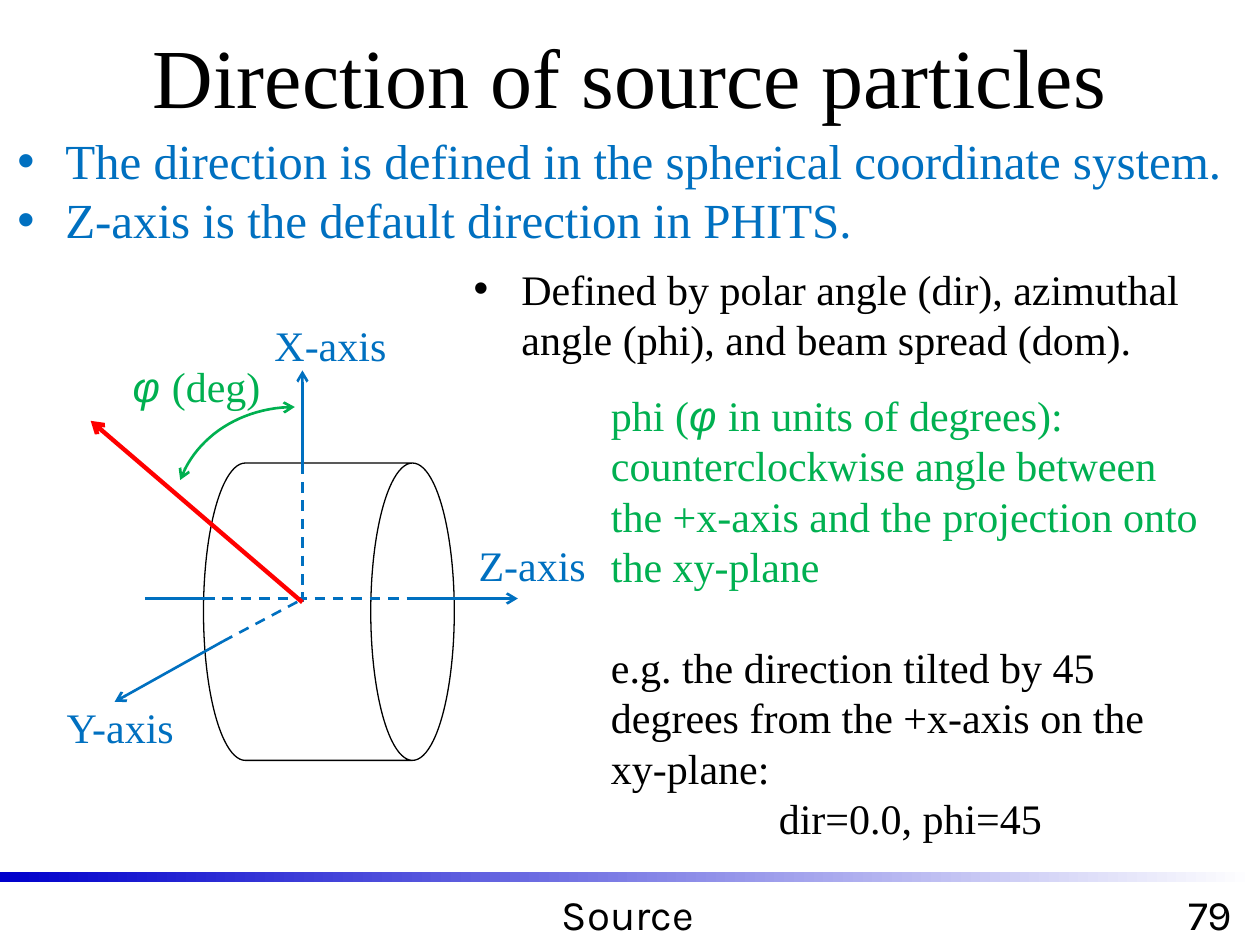
from lxml import etree
from pptx import Presentation
from pptx.dml.color import RGBColor
from pptx.enum.dml import MSO_LINE
from pptx.enum.shapes import MSO_CONNECTOR, MSO_SHAPE
from pptx.enum.text import MSO_ANCHOR, PP_ALIGN
from pptx.oxml.ns import qn
from pptx.util import Inches, Pt

DASH = MSO_LINE.DASH
STRAIGHT = MSO_CONNECTOR.STRAIGHT
CAN, RECT = MSO_SHAPE.CAN, MSO_SHAPE.RECTANGLE
LEFT, MID = PP_ALIGN.LEFT, PP_ALIGN.CENTER
TOP, CORE = MSO_ANCHOR.TOP, MSO_ANCHOR.MIDDLE

COLS, ROWS = 100, 75
SERIF, SANS, FOOT = "Times New Roman", "Arial", "Karla"
HEX = {"black": "000000", "white": "FFFFFF", "blue": "0070C0",
       "green": "00B050", "red": "FF0000", "navy": "0000CC"}

deck = Presentation()
deck.slide_width, deck.slide_height = Inches(10), Inches(7.5)
CELL = deck.slide_width / COLS
slide = deck.slides.add_slide(deck.slide_layouts[6])
shapes = slide.shapes


def cells(*nums):
    """Turn grid cells into slide lengths."""
    return [round(n * CELL) for n in nums]


def tint(name):
    return RGBColor.from_string(HEX[name])


def sub(box, x, y, w, h):
    """Place a part inside a box, counted from its top left corner."""
    return box[0] + x, box[1] + y, w, h


def add_dot(para):
    props = para._p.get_or_add_pPr()
    props.set("marL", str(Inches(0.38)))
    props.set("indent", str(-Inches(0.38)))
    etree.SubElement(props, qn("a:buFont")).set("typeface", SANS)
    etree.SubElement(props, qn("a:buChar")).set("char", "•")


def write(box, paras, size=24, color="black", font=SERIF, align=LEFT,
          anchor=TOP, dots=False):
    """Add a text box; a φ set apart by bars turns italic sans."""
    frame = shapes.add_textbox(*cells(*box)).text_frame
    frame.word_wrap = True
    frame.vertical_anchor = anchor
    for i, text in enumerate(paras):
        para = frame.paragraphs[0] if i == 0 else frame.add_paragraph()
        para.alignment = align
        if dots:
            add_dot(para)
        for part in text.split("|"):
            run = para.add_run()
            run.text = part
            greek = part.startswith("φ")
            run.font.name = SANS if greek else font
            run.font.italic = greek
            run.font.size = Pt(size)
            run.font.color.rgb = tint(color)
    return frame


def tip(line, *ends):
    """Put open arrowheads on the named ends of a line."""
    for end in ends:
        etree.SubElement(line._get_or_add_ln(), qn("a:" + end)).set("type", "arrow")


def draw(box, start, end, color="blue", width=1.5, dash=False, arrow=False):
    ends = [box[k % 2] + n for k, n in enumerate((*start, *end))]
    rod = shapes.add_connector(STRAIGHT, *cells(*ends))
    rod.line.color.rgb = tint(color)
    rod.line.width = Pt(width)
    if dash:
        rod.line.dash_style = DASH
    if arrow:
        tip(rod.line, "tailEnd")
    etree.SubElement(rod._element.spPr, qn("a:effectLst"))


def curve(box, a, b, c, d, steps=24):
    """Draw the azimuth sweep, a cubic curve with two arrowheads."""
    dots = []
    for i in range(steps + 1):
        t = i / steps
        s = 1 - t
        mix = (s ** 3, 3 * s * s * t, 3 * s * t * t, t ** 3)
        dots.append(cells(*(box[k] + sum(m * p[k] for m, p in zip(mix, (a, b, c, d)))
                            for k in (0, 1))))
    pen = shapes.build_freeform(*dots[0])
    pen.add_line_segments(dots[1:], close=False)
    arc = pen.convert_to_shape()
    arc.shadow.inherit = False
    arc.fill.background()
    arc.line.color.rgb = tint("green")
    arc.line.width = Pt(1.5)
    tip(arc.line, "headEnd", "tailEnd")


def drum(box):
    """Draw the cylinder lying on its side, its axis along Z."""
    can = shapes.add_shape(CAN, *cells(*box))
    can.adjustments[0] = 0.333
    can.rotation = 90
    can.shadow.inherit = False
    can.fill.solid()
    can.fill.fore_color.rgb = tint("white")
    can.line.color.rgb = tint("black")
    can.line.width = Pt(0.75)


def axes(box):
    """Draw the cylinder, its three axes and the source direction."""
    drum(sub(box, 10.3, 13.6, 23.6, 19.9))
    zero = (20, 22.8)
    z_in, z_out = (12.2, 22.5), (28.9, 22.5)
    x_out, y_out = (20, 11.8), (13.7, 25.9)
    draw(box, z_out, (37.1, 22.5), arrow=True)
    draw(box, (7.5, 22.5), z_in)
    draw(box, z_in, z_out, dash=True)
    draw(box, x_out, (20, 4.4), arrow=True)
    draw(box, x_out, zero, dash=True)
    draw(box, y_out, (5.1, 30.7), arrow=True)
    draw(box, y_out, (20.1, 22.5), dash=True)
    curve(box, (10.3, 13.1), (11.6, 9.6), (15.2, 7.3), (19.4, 7.3))
    draw(box, zero, (3.2, 8.4), color="red", width=2.5, arrow=True)
    for name, x, y in (("X", 16.8, -0.1), ("Y", 0.3, 30.2), ("Z", 33, 17.3)):
        write(sub(box, x, y, 13.3, 5), [name + "-axis"], color="blue")
    write(sub(box, 4.5, 3.1, 14.2, 5.1), ["φ |(deg)"], color="green", align=MID)


def head(box):
    write(sub(box, 2.5, -0.3, 95, 12.5), ["Direction of source particles"],
          size=48, align=MID, anchor=CORE)
    write(sub(box, 0.4, 9.9, 98, 10.4),
          ["The direction is defined in the spherical coordinate system.",
           "Z-axis is the default direction in PHITS."],
          size=28, color="blue", dots=True)


def notes(box):
    """Write the angle definitions and the worked example."""
    write(sub(box, 0, 0, 59.5, 9.1),
          ["Defined by polar angle (dir), azimuthal angle (phi), "
           "and beam spread (dom)."], dots=True)
    frame = write(sub(box, 10.9, 10, 49.5, 37.4),
                  ["phi (|φ |in units of degrees): counterclockwise angle between "
                   "the +x-axis and the projection onto the xy-plane",
                   "e.g. the direction tilted by 45 degrees from the +x-axis "
                   "on the xy-plane:",
                   "dir=0.0, phi=45"])
    rule, case, value = frame.paragraphs
    for run in rule.runs:
        run.font.color.rgb = tint("green")
    case.space_before = Pt(28.8)
    value.alignment = MID


def foot(box):
    bar = shapes.add_shape(RECT, *cells(*sub(box, 0, 0, 99.6, 0.8)))
    bar.shadow.inherit = False
    bar.line.fill.background()
    bar.fill.gradient()
    bar.fill.gradient_angle = 0
    for stop, name in zip(bar.fill.gradient_stops, ("navy", "white")):
        stop.color.rgb = tint(name)
        stop.position = float(name == "white")
    for text, x, w in (("79", 92.1, 7.9), ("Source", 24, 51.7)):
        write(sub(box, x, 0.8, w, 5), [text], font=FOOT, align=MID)


foot((0, 69.2, COLS, 5.8))
notes((36.6, 20.4, 60.4, 47.4))
head((0, 0, COLS, 20.3))
axes((4, 25, 46, 36))
deck.save("out.pptx")
